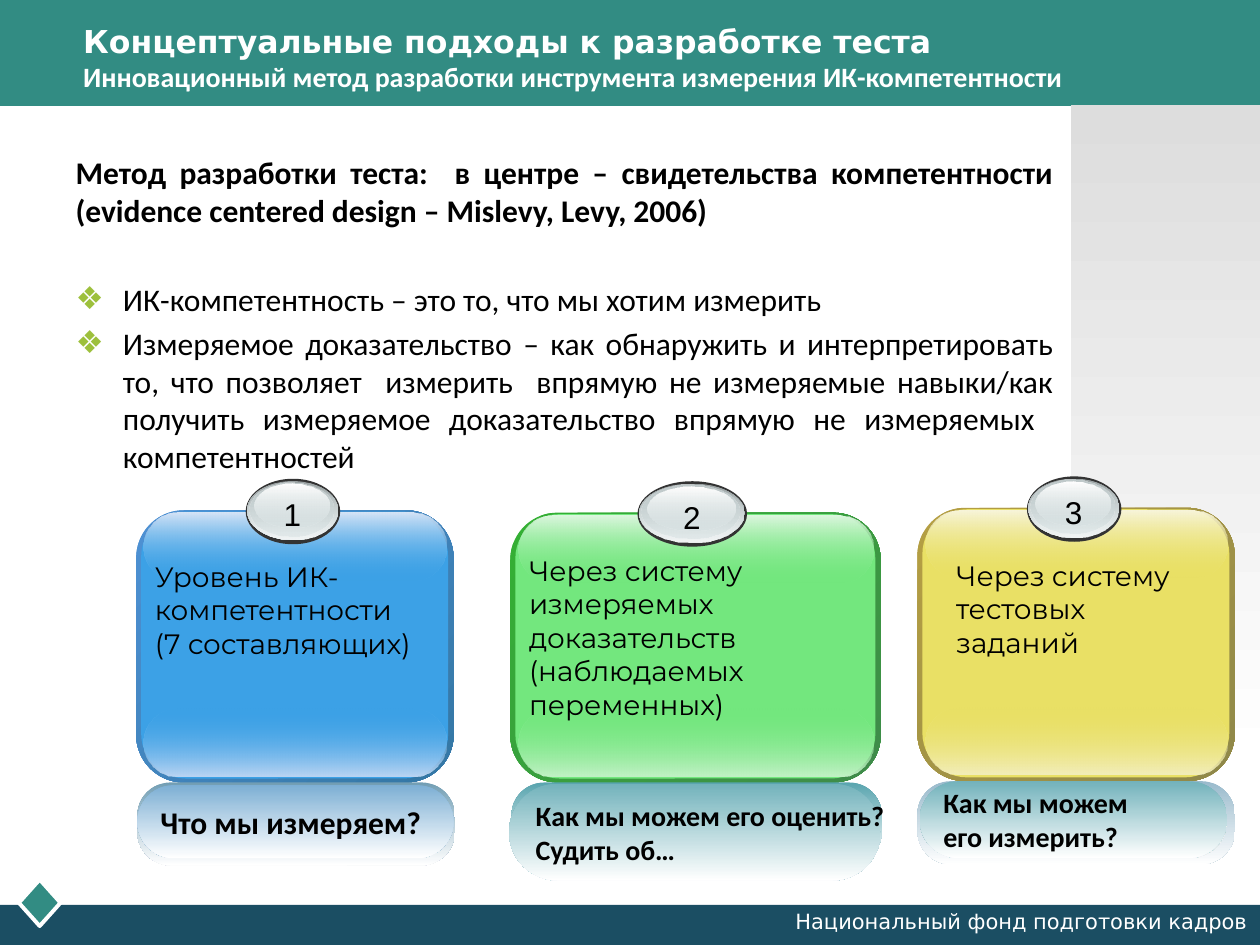
from dataclasses import dataclass
from typing import Optional

from lxml.etree import SubElement
from pptx import Presentation
from pptx.dml.color import RGBColor
from pptx.enum.shapes import MSO_SHAPE
from pptx.enum.text import MSO_ANCHOR, MSO_AUTO_SIZE, PP_ALIGN
from pptx.oxml.ns import qn
from pptx.util import Pt

COLORS = {
    "header": "328C83", "footer": "1B4E63", "white": "FFFFFF", "black": "000000",
    "panel": "DDDDDD", "bullet": "9DC03C", "badge_rim": "333333",
    "steel": "99A1A2", "silver": "D6E1E2", "shine": "F2F5F5", "grey": "C1CBCC",
    "blue": "3CA1E6", "blue_edge": "4E91D4", "blue_dark": "3477A4",
    "blue_top": "D7E5F7", "blue_bottom": "BDD6F3",
    "green": "73E77E", "green_edge": "34B034", "green_dark": "3F8B4A",
    "green_top": "DDF7DF", "green_bottom": "C3F2C7",
    "yellow": "E9E065", "yellow_edge": "B59F43", "yellow_dark": "8F8849",
    "yellow_top": "F8F5DB", "yellow_bottom": "F3EEBB",
    "slate": "729EB4", "sky": "7DAFD4", "teal": "58A4AE", "aqua": "72B2BB",
    "mist": "99BACC", "pale": "C8DAD4",
}


@dataclass
class Box:
    left: float
    top: float
    width: float
    height: float


@dataclass
class Fill:
    start: str
    end: Optional[str] = None
    start_alpha: int = 100
    end_alpha: int = 100
    angle: int = 90


@dataclass
class Plate:
    box: Box
    radius: float
    color: str


@dataclass
class Card:
    number: str
    hue: str
    body: Box
    badge: Box
    text_box: Box
    lines: list[str]
    plates: list[Plate]
    caption: list[str]
    caption_size: int


CARDS = [
    Card("1", "blue", Box(77.8, 291.6, 181.4, 155.5), Box(140.4, 273.6, 54, 37.4),
         Box(81.4, 316, 178.6, 65.5), ["Уровень ИК- компетентности", "(7 составляющих)"],
         [Plate(Box(78.5, 447.1, 181.4, 47.5), 0.404, "slate"),
          Plate(Box(78.5, 448.6, 180.7, 41.8), 0.5, "sky")],
         ["Что мы измеряем?"], 18),
    Card("2", "green", Box(291.6, 293, 211.7, 154.1), Box(364.3, 275, 62.6, 37.4),
         Box(295.2, 312.5, 217.4, 131), ["Через систему измеряемых доказательств",
                                         "(наблюдаемых переменных)"],
         [Plate(Box(292.3, 447.1, 211.7, 46.8), 0.404, "teal"),
          Plate(Box(290.9, 447.8, 212.4, 55.4), 0.5, "aqua")],
         ["Как мы можем его оценить?", "Судить об…"], 16),
    Card("3", "yellow", Box(524.2, 290.2, 181.4, 156.2), Box(586.8, 272.2, 54, 37.4),
         Box(539.3, 315.4, 164.2, 65.5), ["Через систему", "тестовых", "заданий"],
         [Plate(Box(524.2, 446.4, 181.4, 47.5), 0.404, "mist"),
          Plate(Box(527.8, 447.8, 173.5, 42.5), 0.5, "pale"),
          Plate(Box(525.6, 446.4, 175.7, 43.9), 0.5, "aqua")],
         ["Как мы можем", "его измерить?"], 16),
]

BADGE_LAYERS = [
    (0, 0, 1, 1, Fill("badge_rim")),
    (0.015, 0.035, 0.965, 0.9, Fill("steel", "silver")),
    (0.02, 0.05, 0.95, 0.88, Fill("silver", "shine", start_alpha=0)),
    (0.035, 0.055, 0.895, 0.825, Fill("grey", "silver", end_alpha=48)),
    (0.09, 0.08, 0.8, 0.67, Fill("white", "silver", end_alpha=38)),
]


def rgb(name: str) -> RGBColor:
    return RGBColor.from_string(COLORS[name])


def place(shape, box: Box) -> None:
    shape.left, shape.top = Pt(box.left), Pt(box.top)
    shape.width, shape.height = Pt(box.width), Pt(box.height)


def draw_shape(slide, kind, box: Box, fill: Fill, radius: Optional[float] = None):
    shape = slide.shapes.add_shape(
        kind, Pt(box.left), Pt(box.top), Pt(box.width), Pt(box.height))
    shape.shadow.inherit = False
    shape.line.fill.background()
    if radius is not None:
        shape.adjustments[0] = radius
    if fill.end is None:
        shape.fill.solid()
        shape.fill.fore_color.rgb = rgb(fill.start)
        return shape
    shape.fill.gradient()
    shape.fill.gradient_angle = 360 - fill.angle
    for stop, name in zip(shape.fill.gradient_stops, (fill.start, fill.end)):
        stop.color.rgb = rgb(name)
    gradient = shape._element.spPr.find(qn("a:gradFill"))
    for color, alpha in zip(gradient.iter(qn("a:srgbClr")), (fill.start_alpha, fill.end_alpha)):
        if alpha < 100:
            SubElement(color, qn("a:alpha")).set("val", str(alpha * 1000))
    return shape


def write(text_frame, lines: list[str], font: str, size: int, color: str = "black",
          bold: bool = False, align=PP_ALIGN.LEFT, wrap: bool = True) -> None:
    text_frame.text = "\n".join(lines)
    text_frame.word_wrap = wrap
    for paragraph in text_frame.paragraphs:
        paragraph.alignment = align
        for run in paragraph.runs:
            run.font.name, run.font.size, run.font.bold = font, Pt(size), bold
            run.font.color.rgb = rgb(color)


def draw_text(slide, box: Box, lines: list[str], font: str, size: int, **style) -> None:
    shape = slide.shapes.add_textbox(
        Pt(box.left), Pt(box.top), Pt(box.width), Pt(box.height))
    write(shape.text_frame, lines, font, size, **style)


def draw_card(slide, card: Card) -> None:
    body, hue, rounded = card.body, card.hue, MSO_SHAPE.ROUNDED_RECTANGLE
    draw_shape(slide, rounded, body, Fill(f"{hue}_edge", f"{hue}_dark", angle=45), 0.175)
    draw_shape(slide, rounded, Box(body.left + 2.9, body.top + 0.8, body.width - 6,
                                   body.height - 3), Fill(hue), 0.167)
    gloss_left, gloss_width, gloss_height = body.left + 4.5, body.width - 8.5, 38.5
    draw_shape(slide, rounded, Box(gloss_left, body.top + body.height - 42, gloss_width,
                                   gloss_height),
               Fill(hue, f"{hue}_bottom", start_alpha=0), 0.5)
    draw_shape(slide, rounded, Box(gloss_left, body.top + 1.6, gloss_width, gloss_height),
               Fill(f"{hue}_top", hue, end_alpha=0), 0.5)
    for plate in card.plates:
        caption = draw_shape(slide, rounded, plate.box, Fill(plate.color, "white"), plate.radius)
    caption.text_frame.vertical_anchor = MSO_ANCHOR.MIDDLE
    write(caption.text_frame, card.caption, "Calibri", card.caption_size, bold=True, wrap=False)
    badge = card.badge
    for left, top, width, height, fill in BADGE_LAYERS:
        draw_shape(slide, MSO_SHAPE.OVAL,
                   Box(badge.left + left * badge.width, badge.top + top * badge.height,
                       width * badge.width, height * badge.height), fill)
    draw_text(slide, Box(badge.left + badge.width / 2 - 14.5, badge.top + 6, 28.5, 26.6),
              [card.number], "Arial", 18, align=PP_ALIGN.CENTER, wrap=False)
    draw_text(slide, card.text_box, card.lines, "Montserrat", 16)


def draw_frame(slide) -> None:
    draw_shape(slide, MSO_SHAPE.RECTANGLE, Box(0, 0, 720, 60.5), Fill("header"))
    draw_shape(slide, MSO_SHAPE.RECTANGLE, Box(0, 517, 720, 23), Fill("footer"))
    diamond = draw_shape(slide, MSO_SHAPE.DIAMOND, Box(10.8, 502.6, 23.8, 26.6), Fill("header"))
    diamond.line.color.rgb = rgb("white")
    diamond.line.width = Pt(2.25)
    draw_shape(slide, MSO_SHAPE.RECTANGLE, Box(612, 60, 108, 378), Fill("panel", "white"))
    draw_text(slide, Box(435.6, 515.5, 284.4, 18.7), ["Национальный фонд подготовки кадров"],
              "DejaVu Sans", 12, color="white", align=PP_ALIGN.RIGHT)


def fill_title(title) -> None:
    place(title, Box(40.3, 9, 648, 48))
    text_frame = title.text_frame
    text_frame.auto_size = MSO_AUTO_SIZE.NONE
    text_frame.vertical_anchor = MSO_ANCHOR.MIDDLE
    write(text_frame, ["Концептуальные подходы к разработке теста\v"
                       "Инновационный метод разработки инструмента измерения ИК-компетентности"],
          "DejaVu Sans", 18, color="white", bold=True)
    subtitle = text_frame.paragraphs[0].runs[1]
    subtitle.font.name, subtitle.font.size = "Calibri", Pt(16)


def fill_body(body) -> None:
    place(body, Box(36, 84, 573.2, 388))
    text_frame = body.text_frame
    text_frame.auto_size = MSO_AUTO_SIZE.NONE
    write(text_frame, [
        "Метод разработки теста:  в центре – свидетельства компетентности "
        "(evidence centered design – Mislevy, Levy, 2006)",
        "ИК-компетентность – это то, что мы хотим измерить",
        "Измеряемое доказательство – как обнаружить и интерпретировать то, что позволяет  "
        "измерить  впрямую не измеряемые навыки/как получить измеряемое доказательство "
        "впрямую не измеряемых  компетентностей",
    ], "Calibri", 18, align=PP_ALIGN.JUSTIFY)
    for paragraph, space, indent in zip(text_frame.paragraphs, (0, 29, 3.6), (0, 27, 27)):
        paragraph.space_before = Pt(space)
        properties = paragraph._p.get_or_add_pPr()
        properties.set("marL", str(Pt(indent)))
        properties.set("indent", str(-Pt(indent)))
        if indent:
            bullet_color = SubElement(properties, qn("a:buClr"))
            SubElement(bullet_color, qn("a:srgbClr")).set("val", COLORS["bullet"])
            SubElement(properties, qn("a:buChar")).set("char", "❖")
        else:
            SubElement(properties, qn("a:buNone"))
    text_frame.paragraphs[0].runs[0].font.bold = True


def main() -> None:
    presentation = Presentation()
    presentation.slide_width, presentation.slide_height = Pt(720), Pt(540)
    slide = presentation.slides.add_slide(presentation.slide_layouts[1])
    title, body = slide.placeholders
    draw_frame(slide)
    for placeholder in (title, body):
        slide.shapes._spTree.append(placeholder._element)
    fill_title(title)
    fill_body(body)
    for card in CARDS:
        draw_card(slide, card)
    presentation.save("out.pptx")


if __name__ == "__main__":
    main()
